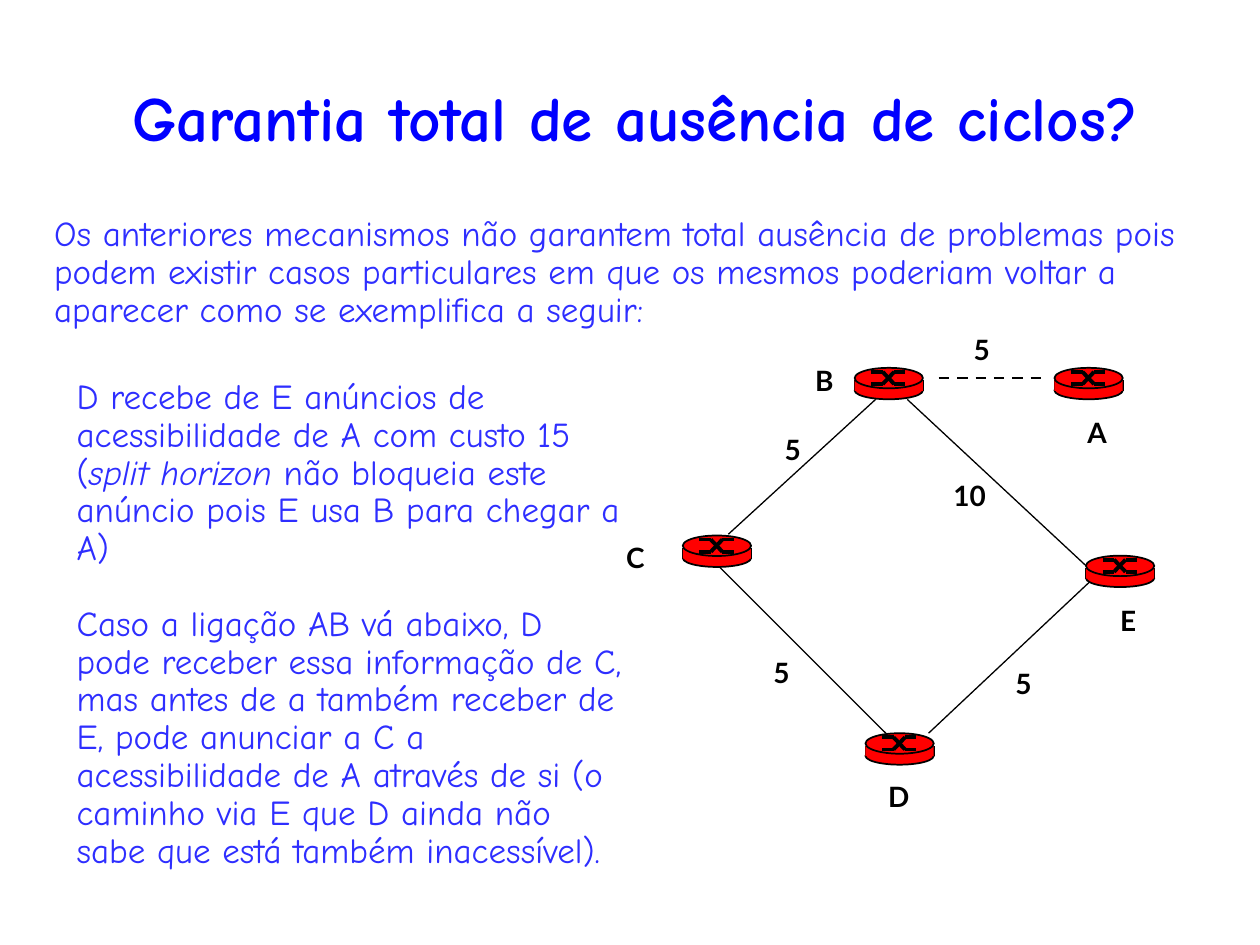
"""Build the slide on routing loops: explanatory text and a five-router network."""
from lxml import etree
from pptx import Presentation
from pptx.dml.color import RGBColor
from pptx.enum.dml import MSO_LINE
from pptx.enum.shapes import MSO_CONNECTOR, MSO_SHAPE
from pptx.enum.text import MSO_ANCHOR, PP_ALIGN
from pptx.oxml.ns import qn
from pptx.util import Pt

STRAIGHT, DASH = MSO_CONNECTOR.STRAIGHT, MSO_LINE.DASH
OVAL, RECT = MSO_SHAPE.OVAL, MSO_SHAPE.RECTANGLE
CENTER, MIDDLE = PP_ALIGN.CENTER, MSO_ANCHOR.MIDDLE
TITLE_BLUE = RGBColor(0x00, 0x00, 0xFF)
TEXT_BLUE = RGBColor(0x2E, 0x2E, 0xFF)
RED = RGBColor(0xFF, 0x00, 0x00)
BLACK = RGBColor(0x00, 0x00, 0x00)
TEXT_FONT, LABEL_FONT = "Comic Neue", "Lato"

TITLE = "Garantia total de ausência de ciclos?"
TITLE_BOX = (23.8, 21.6, 678.2, 90)
TEXTS = [
    ((23.8, 120.2, 666, 73.4), [
        [("Os anteriores mecanismos não garantem total ausência de problemas pois "
          "podem existir casos particulares em que os mesmos poderiam voltar a "
          "aparecer como se exemplifica a seguir:", False)],
    ]),
    ((36.7, 213.1, 329, 313.2), [
        [("D recebe de E anúncios de acessibilidade de A com custo 15 (", False),
         ("split horizon ", True),
         ("não bloqueia este anúncio pois E usa B para chegar a A)", False)],
        [("Caso a ligação AB vá abaixo, D pode receber essa informação de C, mas "
          "antes de a também receber de E, pode anunciar a C a acessibilidade de A "
          "através de si (o caminho via E que D ainda não sabe que está também "
          "inacessível).", False)],
    ]),
]
ROUTERS = {
    "A": ((602.6, 210.2), (614.2, 234)),
    "B": ((488.4, 210.2), (458.6, 204.5)),
    "C": ((390.2, 306), (350.6, 305.3)),
    "D": ((494.6, 419), (500.4, 442.1)),
    "E": ((620.6, 317.5), (632.2, 341.3)),
}
LINKS = [
    ("5", (440.6, 243.4), (416.2, 305.3, 500.4, 228.2), False),
    ("10", (536.4, 270), (518.4, 228.2, 620.6, 323.3), False),
    ("5", (572.4, 377.3), (626.4, 329, 530.6, 419), False),
    ("5", (434.2, 370.8), (410.4, 323.3, 506.2, 419), False),
    ("5", (548.6, 186.5), (536.4, 216, 596.2, 216), True),
]
ROUTER_W, SIDE_TOP, SIDE_H = 39, 7.2, 6
X1, X2, X3, X4 = 9.4, 16, 22.6, 29
Y1, Y2 = 2.3, 9.3
CROSS = [(X1, Y1, X2, Y1), (X2, Y1, X3, Y2), (X3, Y2, X4, Y2),
         (X1, Y2, X2, Y2), (X2, Y2, X3, Y1), (X3, Y1, X4, Y1)]


def add_line(s, ends, width, dashed=False):
    line = s.shapes.add_connector(STRAIGHT, *map(Pt, ends))
    line.line.color.rgb = BLACK
    line.line.width = Pt(width)
    if dashed:
        line.line.dash_style = DASH
    etree.SubElement(line._element.spPr, qn("a:effectLst"))


def add_part(s, kind, box, outlined):
    sp = s.shapes.add_shape(kind, *map(Pt, box))
    sp.shadow.inherit = False
    sp.fill.solid()
    sp.fill.fore_color.rgb = RED
    if outlined:
        sp.line.color.rgb = BLACK
        sp.line.width = Pt(1)
    else:
        sp.line.fill.background()


def add_router(s, x, y):
    add_part(s, OVAL, (x, y + 7.9, ROUTER_W, 10.1), True)
    side = y + SIDE_TOP
    for edge in (x, x + ROUTER_W):
        add_line(s, (edge, side, edge, side + SIDE_H), 1)
    add_part(s, RECT, (x, side, ROUTER_W, SIDE_H), False)
    add_part(s, OVAL, (x, y, ROUTER_W, 11.7), True)
    for x1, y1, x2, y2 in CROSS:
        add_line(s, (x + x1, y + y1, x + x2, y + y2), 2.25)


def set_font(p, name, size, color, bold=False):
    p.font.name, p.font.size, p.font.bold = name, Pt(size), bold
    p.font.color.rgb = color


def add_label(s, text, x, y):
    width = 35.3 if len(text) > 1 else 24.8
    tf = s.shapes.add_textbox(Pt(x), Pt(y), Pt(width), Pt(26.6)).text_frame
    tf.word_wrap = False
    p = tf.paragraphs[0]
    p.text, p.alignment = text, CENTER
    set_font(p, LABEL_FONT, 16, BLACK, True)


def add_text(s, box, paragraphs):
    tf = s.shapes.add_textbox(*map(Pt, box)).text_frame
    tf.word_wrap = True
    for i, runs in enumerate(paragraphs):
        p = tf.add_paragraph() if i else tf.paragraphs[0]
        p.line_spacing = 0.9
        p.space_before = Pt(21.7 if i else 0)
        set_font(p, TEXT_FONT, 20, TEXT_BLUE)
        for text, italic in runs:
            r = p.add_run()
            r.text = text
            if italic:
                r.font.italic = True


def main():
    prs = Presentation()
    prs.slide_width, prs.slide_height = Pt(720), Pt(540)
    s = prs.slides.add_slide(prs.slide_layouts[5])
    title = s.shapes.title
    title.left, title.top, title.width, title.height = map(Pt, TITLE_BOX)
    tf = title.text_frame
    tf.text, tf.vertical_anchor = TITLE, MIDDLE
    tf.paragraphs[0].alignment = CENTER
    set_font(tf.paragraphs[0], TEXT_FONT, 36, TITLE_BLUE, True)
    for box, paragraphs in TEXTS:
        add_text(s, box, paragraphs)
    for cost, at, ends, dashed in LINKS:
        add_line(s, ends, 1.5 if dashed else 0.75, dashed)
        add_label(s, cost, *at)
    for name, (at, label_at) in ROUTERS.items():
        add_router(s, *at)
        add_label(s, name, *label_at)
    prs.save("out.pptx")


if __name__ == "__main__":
    main()
